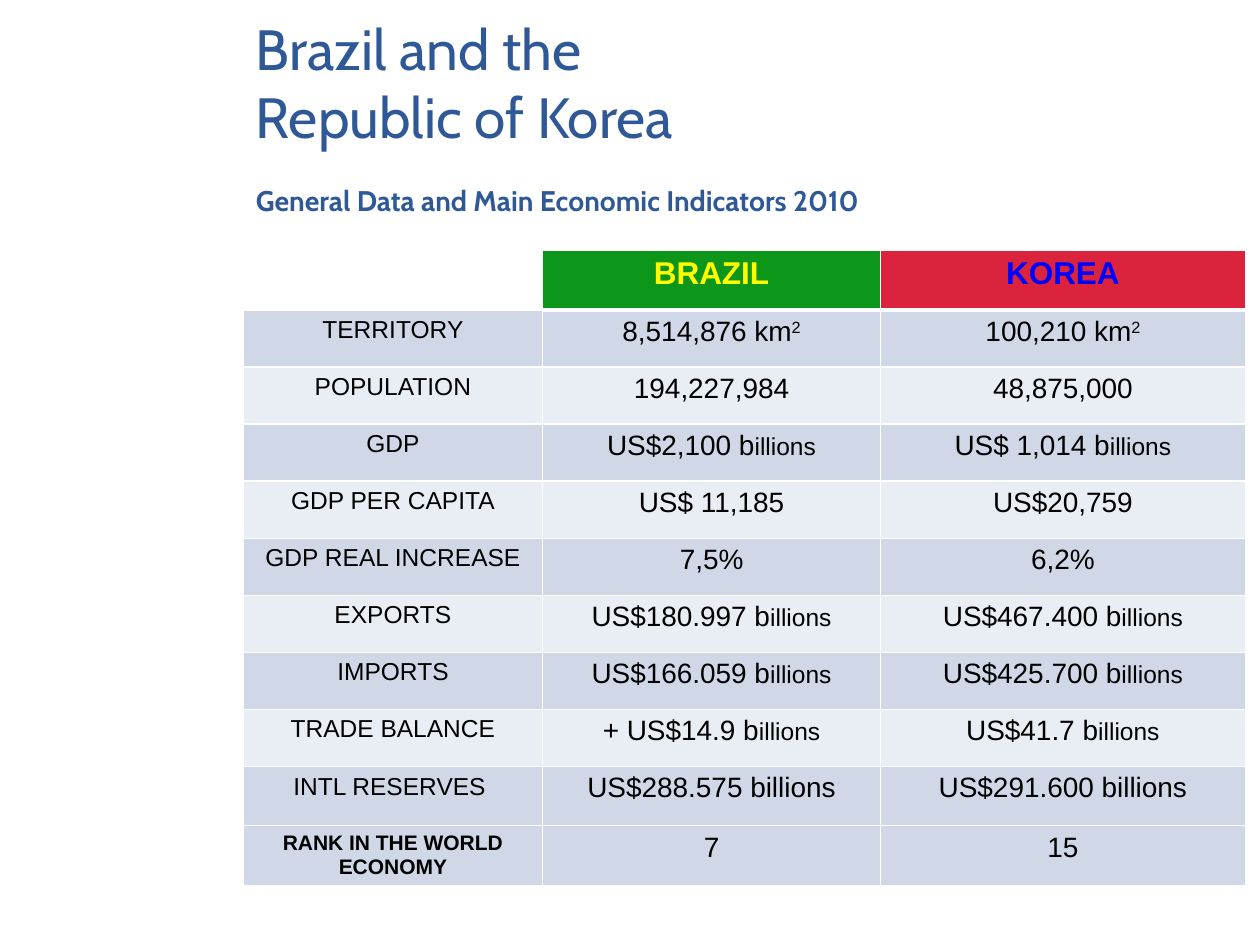
from pptx import Presentation
from pptx.dml.color import RGBColor
from pptx.enum.text import MSO_ANCHOR as ANCHOR, MSO_AUTO_SIZE as AUTO, PP_ALIGN as ALIGN
from pptx.oxml.ns import qn
from pptx.util import Pt
from lxml.etree import SubElement

BLUE, WHITE, BLACK = "2F5897", "FFFFFF", "000000"
TITLE = [("Brazil and the ", 32.4, False, 0),
         ("Republic of Korea", 32.4, False, 0),
         ("General Data and Main Economic Indicators 2010", 16.2, True, 19)]
HEADS = [("BRAZIL", "FFFF00", "0D971A"), ("KOREA", "0000FF", "DB233D")]
SMALL, SUPER = "|", "^"
ROWS = [
    ("TERRITORY", "8,514,876 km^2", "100,210 km^2"),
    ("POPULATION", "194,227,984", "48,875,000"),
    ("GDP", "US$2,100 b|illions", "US$ 1,014 b|illions"),
    ("GDP PER CAPITA", "US$ 11,185", "US$20,759"),
    ("GDP REAL INCREASE", "7,5%", "6,2%"),
    ("EXPORTS", "US$180.997 b|illions", "US$467.400 b|illions"),
    ("IMPORTS", "US$166.059 b|illions", "US$425.700 b|illions"),
    ("TRADE BALANCE", "+ US$14.9 b|illions", "US$41.7 b|illions"),
    ("INTL RESERVES ", "US$288.575 billions", "US$291.600 billions"),
    ("RANK IN THE WORLD ECONOMY", "7", "15"),
]
BANDS = ["D0D8E8", "E9EDF4"]
COL_WIDTHS = [171.1, 193, 208.6]
ROW_HEIGHTS = [34.4] + [32.6] * 8 + [33.8, 33.2]


def rgb(value):
    return RGBColor.from_string(value)


def add_text(p, text, size=16, color=BLACK, bold=False, font="Arial", align=ALIGN.CENTER):
    p.alignment = align
    r = p.add_run()
    r.text = text
    r.font.size, r.font.bold, r.font.name = Pt(size), bold, font
    r.font.color.rgb = rgb(color)
    return r


def set_borders(cell, top, bottom):
    tc_pr = cell._tc.get_or_add_tcPr()
    for side, width in (("L", 1), ("R", 1), ("T", top), ("B", bottom)):
        ln = SubElement(tc_pr, qn(f"a:ln{side}"), w=str(Pt(width)))
        fill = SubElement(ln, qn("a:solidFill"))
        SubElement(fill, qn("a:srgbClr"), val=WHITE)


def add_value(p, value):
    mark = SUPER if SUPER in value else SMALL
    main, _, tail = value.partition(mark)
    add_text(p, main)
    if tail and mark == SMALL:
        add_text(p, tail, size=14)
    elif tail:
        r = add_text(p, tail)
        r._r.get_or_add_rPr().set("baseline", "30000")


def add_title(s):
    sp = s.shapes.title
    sp.left, sp.top, sp.width, sp.height = Pt(139), Pt(3.6), Pt(414), Pt(124.6)
    tf = sp.text_frame
    tf.auto_size, tf.vertical_anchor = AUTO.NONE, ANCHOR.MIDDLE
    for i, (text, size, bold, gap) in enumerate(TITLE):
        p = tf.add_paragraph() if i else tf.paragraphs[0]
        p.space_before = Pt(gap)
        add_text(p, text, size=size, color=BLUE, bold=bold, font="Cabin", align=ALIGN.LEFT)


def add_indicators(s):
    table = s.shapes.add_table(len(ROW_HEIGHTS), len(COL_WIDTHS), Pt(139), Pt(142.8),
                               Pt(sum(COL_WIDTHS)), Pt(sum(ROW_HEIGHTS))).table
    table.first_row = table.horz_banding = False
    for col, width in zip(table.columns, COL_WIDTHS):
        col.width = Pt(width)
    for row, height in zip(table.rows, ROW_HEIGHTS):
        row.height = Pt(height)

    for i, row in enumerate(table.rows):
        for j, cell in enumerate(row.cells):
            set_borders(cell, 3 if i == 1 and j else 1, 3 if i == 0 and j else 1)
    table.cell(0, 0).fill.background()

    for j, (text, color, fill) in enumerate(HEADS, 1):
        cell = table.cell(0, j)
        cell.fill.solid()
        cell.fill.fore_color.rgb = rgb(fill)
        add_text(cell.text_frame.paragraphs[0], text, size=18, color=color, bold=True)

    for i, values in enumerate(ROWS, 1):
        last = i == len(ROWS)
        band = BANDS[0] if last else BANDS[(i - 1) % 2]
        for j, value in enumerate(values):
            cell = table.cell(i, j)
            cell.fill.solid()
            cell.fill.fore_color.rgb = rgb(band)
            p = cell.text_frame.paragraphs[0]
            if j:
                add_value(p, value)
            else:
                add_text(p, value, size=12 if last else 14, bold=last)


def main():
    prs = Presentation()
    prs.slide_width, prs.slide_height = Pt(720), Pt(540)
    s = prs.slides.add_slide(prs.slide_layouts[5])
    add_title(s)
    add_indicators(s)
    prs.save("out.pptx")


if __name__ == "__main__":
    main()
